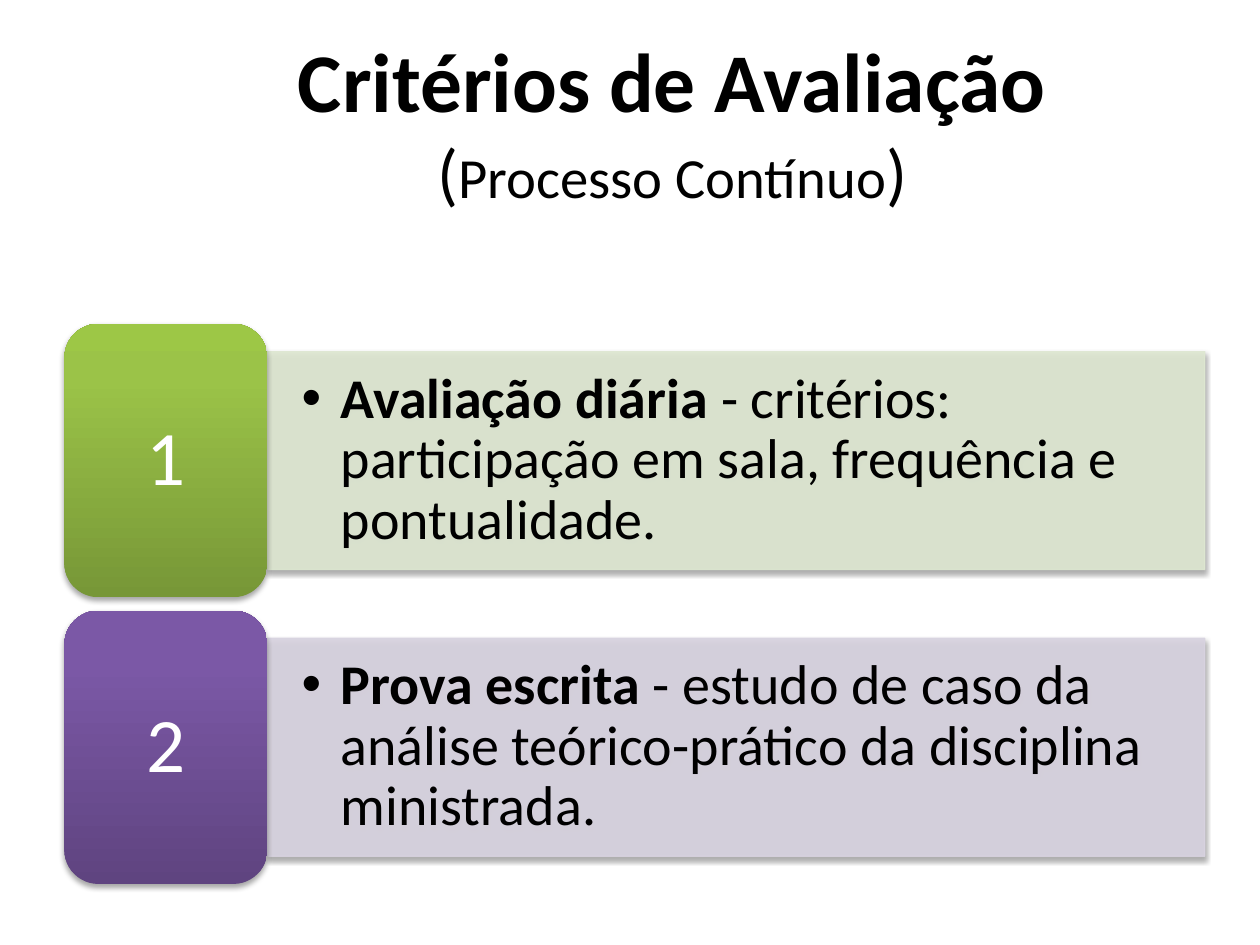
from lxml import etree
from pptx import Presentation, util as u
from pptx.dml.color import RGBColor
from pptx.enum import shapes, text
from pptx.oxml import parse_xml

TITLE = [("Critérios de Avaliação", "title", True), ("\n", "title", True),
         ("(", "paren", False), ("Processo Contínuo", "sub", False),
         (")", "paren", False)]
ITEMS = [
    dict(head="Avaliação diária ",
         body="- critérios: participação em sala, frequência e pontualidade.",
         band="DEE7D1", ramp=("779737", "9BC348", "9DC746")),
    dict(head="Prova escrita ",
         body="- estudo de caso da análise teórico-prático da disciplina ministrada.",
         band="D8D3E0", ramp=("5F4480", "7B58A6", "7C57A8")),
]
THEME = dict(font="Calibri", dark="000000", light="FFFFFF",
             title=47.7, paren=39.6, sub=32.4, body=32, num=44)
LEFT, TOP, PITCH = 1.3, 6.53, 5.78
BADGE = (4.09, 5.51)
BAND = (18.9, 4.39)
HANG = u.Cm(0.79)
NS = "http://schemas.openxmlformats.org/drawingml/2006/main"
STOPS = (0, 80000, 100000)


def node(xml):
    return parse_xml(xml.replace(">", f' xmlns:a="{NS}">', 1))


def shade(shape):
    """Replace the theme shadow with a soft one falling straight down."""
    shape.shadow.inherit = False
    props = shape._element.spPr
    props.remove(props.find(f"{{{NS}}}effectLst"))
    props.append(node(
        '<a:effectLst><a:outerShdw blurRad="39370" dist="22860" dir="5400000" '
        'rotWithShape="0"><a:srgbClr val="000000"><a:alpha val="35000"/>'
        '</a:srgbClr></a:outerShdw></a:effectLst>'))


def fade(color):
    """Make a solid colour 90% opaque."""
    for rgb in color.iter(f"{{{NS}}}srgbClr"):
        etree.SubElement(rgb, f"{{{NS}}}alpha").set("val", "90000")


def ramp(shape, colors):
    """Fill with a gradient running from the bottom up."""
    stops = "".join(f'<a:gs pos="{p}"><a:srgbClr val="{c}"/></a:gs>'
                    for p, c in zip(STOPS, colors))
    fill = node(f'<a:gradFill><a:gsLst>{stops}</a:gsLst>'
                '<a:lin ang="16200000" scaled="0"/></a:gradFill>')
    shape._element.spPr.find(f"{{{NS}}}prstGeom").addnext(fill)


def setup(shape, side, end):
    frame = shape.text_frame
    form = dict(word_wrap=True, vertical_anchor=text.MSO_ANCHOR.MIDDLE,
                margin_left=u.Cm(side), margin_right=u.Cm(side),
                margin_top=u.Cm(end), margin_bottom=u.Cm(end))
    for key, val in form.items():
        setattr(frame, key, val)
    return frame.paragraphs[0]


def write(para, words, size, bold=False, color="dark"):
    run = para.add_run()
    run.text = words
    form = dict(name=THEME["font"], size=u.Pt(THEME[size]), bold=bold)
    for key, val in form.items():
        setattr(run.font, key, val)
    run.font.color.rgb = RGBColor.from_string(THEME[color])


def block(slide, kind, left, top, size):
    shape = slide.shapes.add_shape(kind, *map(u.Cm, (left, top, *size)))
    shade(shape)
    return shape


def add_band(slide, item, top):
    drop = (BADGE[1] - BAND[1]) / 2
    band = block(slide, shapes.MSO_SHAPE.RECTANGLE, LEFT + BADGE[0], top + drop, BAND)
    color = RGBColor.from_string(item["band"])
    band.fill.solid()
    band.fill.fore_color.rgb = color
    band.line.color.rgb = color
    band.line.width = u.Pt(0.75)
    fade(band._element.spPr.find(f"{{{NS}}}solidFill"))
    fade(band._element.spPr.find(f"{{{NS}}}ln"))
    para = setup(band, 0.69, 0.36)
    props = para._p.get_or_add_pPr()
    props.set("marL", str(HANG))
    props.set("indent", str(-HANG))
    props.append(node('<a:buFont typeface="Arial"></a:buFont>'))
    props.append(node('<a:buChar char="•"></a:buChar>'))
    para.alignment = text.PP_ALIGN.LEFT
    para.line_spacing = 0.9
    write(para, item["head"], "body", True)
    write(para, item["body"], "body")


def add_badge(slide, num, item, top):
    badge = block(slide, shapes.MSO_SHAPE.ROUNDED_RECTANGLE, LEFT, top, BADGE)
    ramp(badge, item["ramp"])
    badge.line.fill.background()
    para = setup(badge, 0.46, 0.23)
    para.alignment = text.PP_ALIGN.CENTER
    para.line_spacing = 0.9
    write(para, str(num), "num", color="light")


def main():
    deck = Presentation()
    deck.slide_width, deck.slide_height = u.Cm(25.4), u.Cm(19.05)
    slide = deck.slides.add_slide(deck.slide_layouts[6])
    for num, item in enumerate(ITEMS, 1):
        top = TOP + (num - 1) * PITCH
        add_band(slide, item, top)
        add_badge(slide, num, item, top)
    box = slide.shapes.add_textbox(*map(u.Cm, (2.34, 0.84, 22.43, 3.18)))
    para = setup(box, 0.25, 0.13)
    para.alignment = text.PP_ALIGN.CENTER
    for words, size, bold in TITLE:
        if words == "\n":
            para.add_line_break()
        else:
            write(para, words, size, bold)
    deck.save("out.pptx")


if __name__ == "__main__":
    main()
